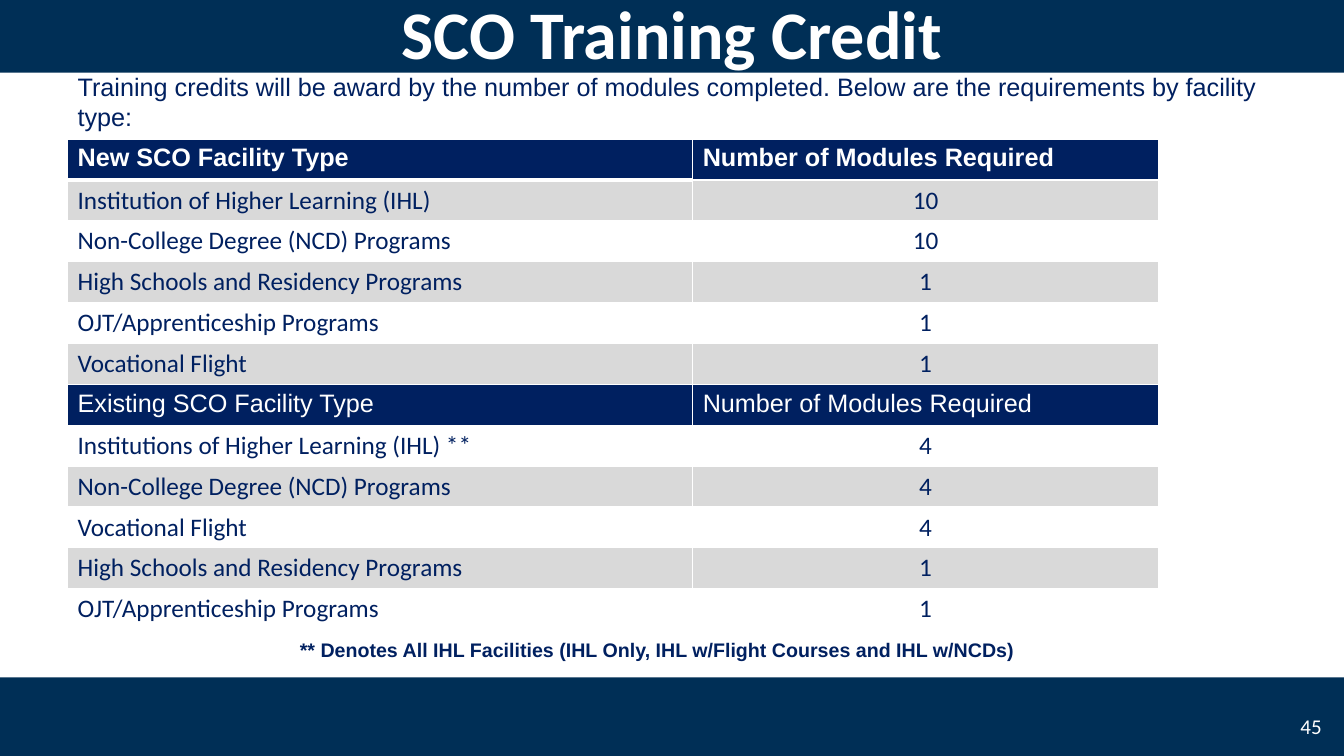
"""Build the SCO Training Credit slide with its table of required modules."""
import pptx
import pptx.dml.color
import pptx.enum.shapes
import pptx.enum.text
import pptx.oxml
import pptx.oxml.ns
import pptx.util

Inches = pptx.util.Inches
Pt = pptx.util.Pt
ALIGN = pptx.enum.text.PP_ALIGN
ANCHOR = pptx.enum.text.MSO_ANCHOR

COLORS = {"band": "002F56", "navy": "002060", "gray": "D9D9D9", "white": "FFFFFF"}
REQUIRED = "Number of Modules Required"
SECTIONS = [
    ("New SCO Facility Type", [
        ("Institution of Higher Learning (IHL)", "10"),
        ("Non-College Degree (NCD) Programs", "10"),
        ("High Schools and Residency Programs", "1"),
        ("OJT/Apprenticeship Programs", "1"),
        ("Vocational Flight", "1"),
    ]),
    ("Existing SCO Facility Type", [
        ("Institutions of Higher Learning (IHL) **", "4"),
        ("Non-College Degree (NCD) Programs", "4"),
        ("Vocational Flight", "4"),
        ("High Schools and Residency Programs", "1"),
        ("OJT/Apprenticeship Programs", "1"),
    ]),
]


def rgb(name):
    return pptx.dml.color.RGBColor.from_string(COLORS[name])


def write(tf, text, size, font, color, bold=False, align=ALIGN.LEFT):
    p = tf.paragraphs[0]
    p.alignment = align
    p.space_before = Pt(0)
    r = p.add_run()
    r.text = text
    r.font.size = Pt(size)
    r.font.name = font
    r.font.bold = bold
    r.font.color.rgb = rgb(color)
    return p


def place(sp, left, top, width, height):
    sp.left, sp.top = Inches(left), Inches(top)
    sp.width, sp.height = Inches(width), Inches(height)


def frame(sp, anchor, inset_x=0.1, inset_y=0.05):
    tf = sp.text_frame
    tf.word_wrap = True
    tf.auto_size = pptx.enum.text.MSO_AUTO_SIZE.NONE
    tf.vertical_anchor = anchor
    tf.margin_left = tf.margin_right = Inches(inset_x)
    tf.margin_top = tf.margin_bottom = Inches(inset_y)
    return tf


def add_band(s, top):
    sp = s.shapes.add_shape(pptx.enum.shapes.MSO_SHAPE.RECTANGLE,
                            0, Inches(top), Inches(13.33), Inches(0.8))
    sp.shadow.inherit = False
    sp.fill.solid()
    sp.fill.fore_color.rgb = rgb("band")
    sp.line.fill.background()
    s.shapes._spTree.insert(2, sp._element)


def add_text(s, box, anchor, insets, *style, **options):
    sp = s.shapes.add_textbox(*(Inches(v) for v in box))
    write(frame(sp, anchor, *insets), *style, **options)


def set_title(s):
    title = s.shapes.title
    place(title, 0, -0.08, 13.33, 0.8)
    write(frame(title, ANCHOR.MIDDLE, 0.12, 0.06), "SCO Training Credit",
          48.6, "Calibri", "white", bold=True, align=ALIGN.CENTER)


def set_intro(s):
    body = s.placeholders[1]
    place(body, 0.67, 0.66, 12, 4.95)
    p = write(frame(body, ANCHOR.TOP),
              "Training credits will be award by the number of modules completed. "
              "Below are the requirements by facility type:", 18, "Arial", "navy")
    pPr = p._p.get_or_add_pPr()
    pPr.set("marL", "0")
    pPr.set("indent", "0")
    pPr.append(pptx.oxml.parse_xml(f'<a:buNone {pptx.oxml.ns.nsdecls("a")}/>'))


def set_borders(cell, **widths):
    for side in "LRTB":
        cell._tc.get_or_add_tcPr().append(pptx.oxml.parse_xml(
            f'<a:ln{side} {pptx.oxml.ns.nsdecls("a")} w="{Pt(widths.get(side, 1))}">'
            f'<a:solidFill><a:srgbClr val="{COLORS["white"]}"/></a:solidFill></a:ln{side}>'))


def fill_cell(cell, fill, borders, *style, **options):
    set_borders(cell, **borders)
    if fill:
        cell.fill.solid()
        cell.fill.fore_color.rgb = rgb(fill)
    else:
        cell.fill.background()
    write(cell.text_frame, *style, **options)


def add_modules_table(s):
    row_count = sum(1 + len(facilities) for _, facilities in SECTIONS)
    table = s.shapes.add_table(row_count, 2, Inches(0.67), Inches(1.38),
                               Inches(10.82), Inches(4.87)).table
    for column, width in zip(table.columns, (6.2, 4.62)):
        column.width = Inches(width)
    for row in table.rows:
        row.height = Inches(4.87 / row_count)
    row, facility = 0, 0
    for heading, facilities in SECTIONS:
        first = row == 0
        for col, text in enumerate((heading, REQUIRED)):
            borders = {"B": 3} if first and col == 0 else {}
            fill_cell(table.cell(row, col), "navy", borders,
                      text, 18, "Arial", "white", bold=first)
        row += 1
        for values in facilities:
            fill = None if facility % 2 else "gray"
            for col, text in enumerate(values):
                borders = {"T": 3} if facility == 0 and col == 0 else {}
                fill_cell(table.cell(row, col), fill, borders, text, 18, "Calibri",
                          "navy", align=ALIGN.CENTER if col else ALIGN.LEFT)
            row += 1
            facility += 1


def main():
    prs = pptx.Presentation()
    prs.slide_width, prs.slide_height = Inches(13.33), Inches(7.5)
    s = prs.slides.add_slide(prs.slide_layouts[1])
    for top in (-0.08, 6.72):
        add_band(s, top)
    set_title(s)
    set_intro(s)
    add_modules_table(s)
    add_text(s, (0.52, 6.28, 12, 0.34), ANCHOR.TOP, (0.1, 0.05),
             "** Denotes All IHL Facilities (IHL Only, IHL w/Flight Courses and IHL w/NCDs)",
             14, "Arial", "navy", bold=True, align=ALIGN.CENTER)
    add_text(s, (12.67, 7, 0.56, 0.4), ANCHOR.MIDDLE, (0.12, 0.06),
             "45", 15, "Calibri", "white", align=ALIGN.RIGHT)
    prs.save("out.pptx")


if __name__ == "__main__":
    main()
